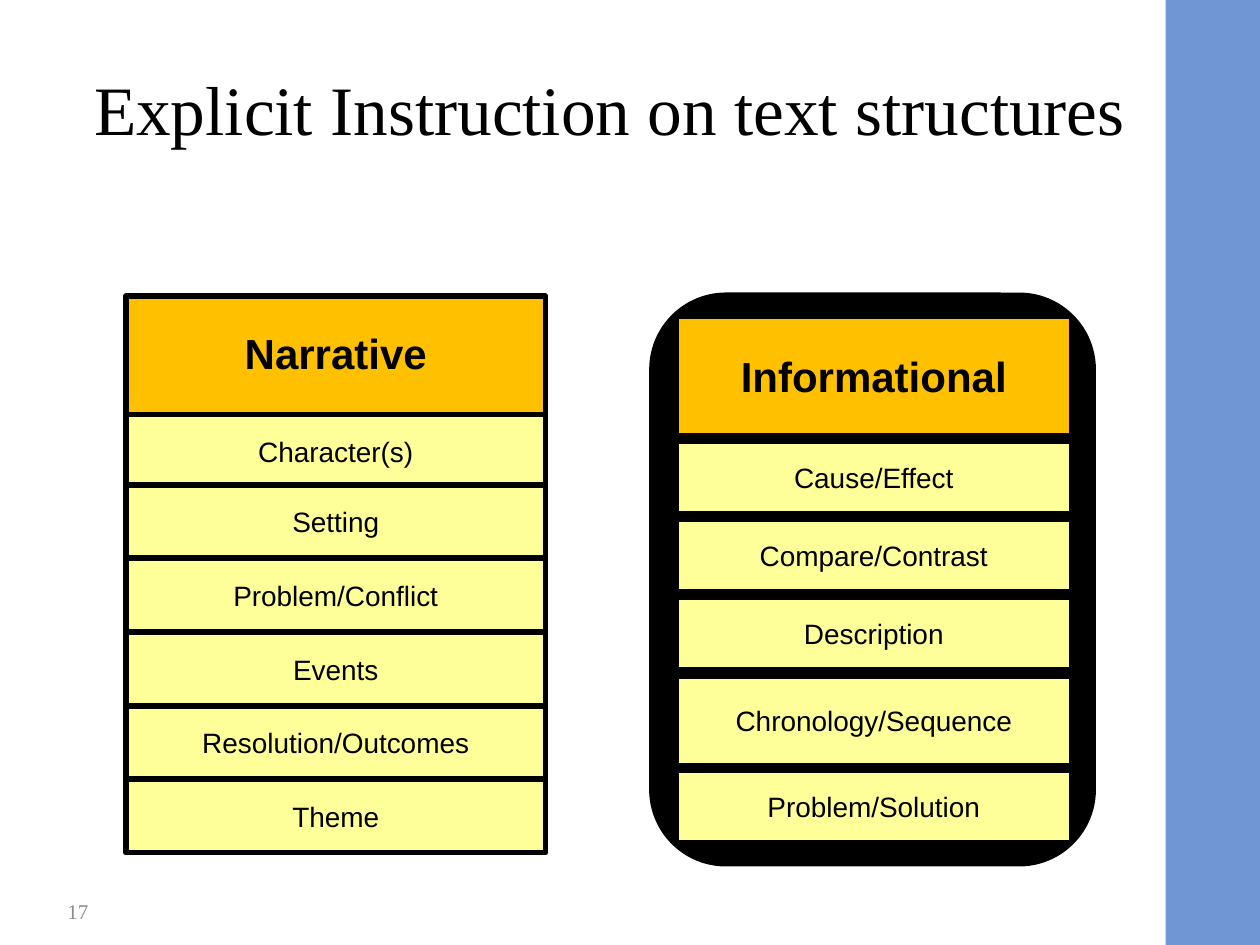
from dataclasses import dataclass

import pptx
import pptx.dml.color
import pptx.enum.shapes
import pptx.enum.text
import pptx.util

WIDTH = pptx.util.Inches(10)
HEIGHT = pptx.util.Inches(7.5)
COLORS = {
    "white": "FFFFFF", "black": "000000", "bar": "7097D3",
    "heading": "FFC000", "row": "FFFF99", "number": "8C8C8C",
}
SHAPE = pptx.enum.shapes.MSO_SHAPE
ALIGN = pptx.enum.text.PP_ALIGN
ANCHOR = pptx.enum.text.MSO_ANCHOR


@dataclass
class Area:
    """Lengths are percentages of the slide's width and height."""
    left: float
    top: float
    width: float
    height: float

    def lengths(self) -> tuple:
        return (int(WIDTH * self.left / 100), int(HEIGHT * self.top / 100),
                int(WIDTH * self.width / 100), int(HEIGHT * self.height / 100))


@dataclass
class Row:
    label: str
    height: float
    gap: float  # space to the next row, negative where rows overlap


@dataclass
class Panel:
    left: float
    top: float
    width: float
    border: float
    heading_spacing: float
    heading_anchor: object
    rows: list


def color(name: str) -> pptx.dml.color.RGBColor:
    return pptx.dml.color.RGBColor.from_string(COLORS[name])


def add_box(shapes, area: Area, fill: str, border: float = 0, kind=SHAPE.RECTANGLE):
    box = shapes.add_shape(kind, *area.lengths())
    box.shadow.inherit = False
    box.fill.solid()
    box.fill.fore_color.rgb = color(fill)
    if border:
        box.line.color.rgb = color("black")
        box.line.width = pptx.util.Pt(border)
    else:
        box.line.fill.background()
    return box


def write(box, text: str, size: float, font: str = "Arial", ink: str = "black",
          bold: bool = False, align=ALIGN.CENTER, anchor=ANCHOR.MIDDLE):
    frame = box.text_frame
    frame.text = text
    frame.word_wrap = True
    frame.auto_size = pptx.enum.text.MSO_AUTO_SIZE.NONE
    frame.vertical_anchor = anchor
    para = frame.paragraphs[0]
    para.alignment = align
    span = para.runs[0]
    span.font.name = font
    span.font.size = pptx.util.Pt(size)
    span.font.bold = bold
    span.font.color.rgb = color(ink)
    return para


def add_panel(shapes, panel: Panel) -> None:
    top = panel.top
    for index, row in enumerate(panel.rows):
        heading = index == 0
        area = Area(panel.left, top, panel.width, row.height)
        box = add_box(shapes, area, "heading" if heading else "row", panel.border)
        if heading:
            para = write(box, row.label, 24, bold=True, anchor=panel.heading_anchor)
            para.line_spacing = panel.heading_spacing
        else:
            write(box, row.label, 16)
        top += row.height + row.gap


NARRATIVE = Panel(10, 31.33, 33.3, 3, 1.5, ANCHOR.TOP, [
    Row("Narrative", 12.93, -0.4),
    Row("Character(s)", 7.73, -0.27),
    *(Row(label, 7.73, 0.07) for label in (
        "Setting", "Problem/Conflict", "Events", "Resolution/Outcomes", "Theme")),
])
INFORMATIONAL = Panel(53.8, 33.73, 31.1, 0.75, 1.0, ANCHOR.MIDDLE, [
    Row("Informational", 12.13, 1.07),
    *(Row(label, 7.2, 1.07) for label in (
        "Cause/Effect", "Compare/Contrast", "Description")),
    Row("Chronology/Sequence", 9.07, 0.93),
    Row("Problem/Solution", 7.2, 0),
])


def main() -> None:
    deck = pptx.Presentation()
    deck.slide_width, deck.slide_height = WIDTH, HEIGHT
    page = deck.slides.add_slide(deck.slide_layouts[5])
    page.background.fill.solid()
    page.background.fill.fore_color.rgb = color("white")

    # Side bar
    add_box(page.shapes, Area(92.5, 0, 7.5, 100), "bar")

    # Title
    title = page.shapes.title
    title.left, title.top, title.width, title.height = Area(3.4, 2.27, 90, 18.27).lengths()
    write(title, "Explicit Instruction on text structures", 39.6, "Times New Roman")

    # Informational panel on its rounded backing
    informational = page.shapes.add_group_shape().shapes
    add_box(informational, Area(51.8, 31.33, 34.9, 60), "black", 4, SHAPE.ROUNDED_RECTANGLE)
    add_panel(informational, INFORMATIONAL)

    # Narrative panel
    add_panel(page.shapes.add_group_shape().shapes, NARRATIVE)

    # Slide number
    number = add_box(page.shapes, Area(0, 94.4, 8, 4), "white")
    write(number, "17", 12, "Times New Roman", "number", align=ALIGN.RIGHT)

    deck.save("out.pptx")


if __name__ == "__main__":
    main()
